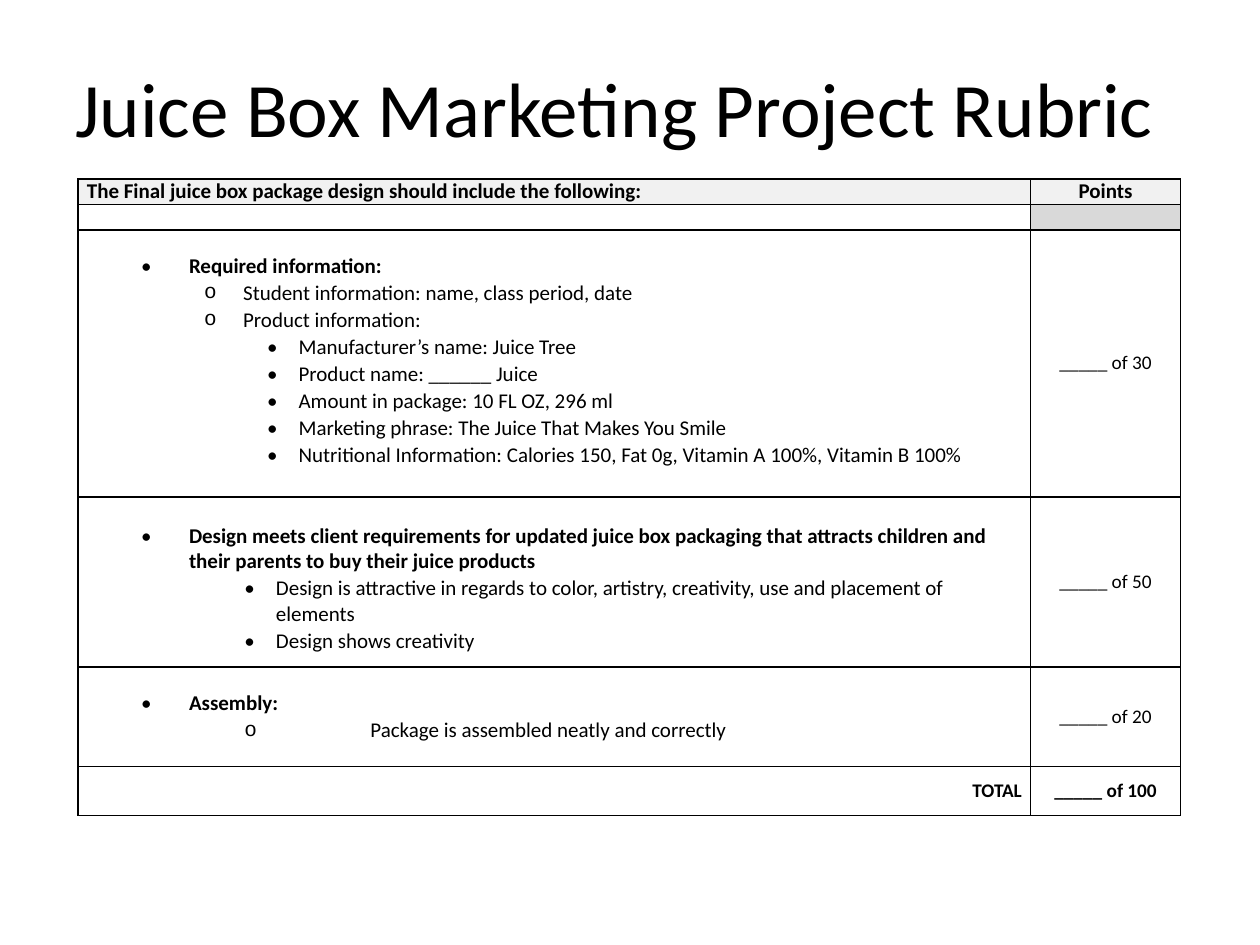
from dataclasses import dataclass

import lxml.etree
import pptx
import pptx.dml.color
import pptx.enum.text
import pptx.oxml.ns
import pptx.util

Inches = pptx.util.Inches
Align = pptx.enum.text.PP_ALIGN
Anchor = pptx.enum.text.MSO_ANCHOR


@dataclass(frozen=True)
class Theme:
    font: str = "Calibri"
    circle_font: str = "Courier New"
    ink: str = "000000"
    header_fill: str = "F1F1F1"
    blocked_fill: str = "D9D9D9"
    title_size: float = 44
    body_size: float = 12
    points_size: float = 11
    border_width: float = 1
    line_gap: float = 0.8


@dataclass(frozen=True)
class Bullet:
    symbol: str
    font: str
    left: float
    hanging: float
    level: int


@dataclass(frozen=True)
class Line:
    text: str
    bullet: Bullet | None = None
    bold: bool = False
    size: float = 12
    align: Align = Align.LEFT


@dataclass(frozen=True)
class CellContent:
    lines: tuple[Line, ...] = ()
    fill: str | None = None
    anchor: Anchor = Anchor.TOP
    left: float = 0
    top: float = 0
    right: float = 0


THEME = Theme()
HEADING = Bullet("•", THEME.font, 0.88, 0.38, 1)
CIRCLE = Bullet("o", THEME.circle_font, 1.31, 0.31, 2)
DETAIL = Bullet("•", THEME.font, 1.75, 0.25, 3)
DESIGN = Bullet("•", THEME.font, 1.57, 0.25, 2)
ASSEMBLY = Bullet("o", THEME.circle_font, 2.32, 1, 2)
COLUMN_WIDTHS = (7.56, 1.19)
ROW_HEIGHTS = (0.2, 0.2, 2.12, 1.35, 0.79, 0.39)
SIDE_MARGIN = 0.07


def criteria(top: float, *lines: Line) -> CellContent:
    return CellContent(lines, top=top, right=SIDE_MARGIN)


def points(text: str, bold: bool = False) -> CellContent:
    line = Line(text, bold=bold, size=THEME.points_size, align=Align.CENTER)
    return CellContent((line,), anchor=Anchor.MIDDLE)


RUBRIC = (
    (
        CellContent(
            (Line("The Final juice box package design should include the following:", bold=True),),
            THEME.header_fill,
            left=SIDE_MARGIN,
        ),
        CellContent((Line("Points", bold=True, align=Align.CENTER),), THEME.header_fill),
    ),
    (CellContent(), CellContent(fill=THEME.blocked_fill)),
    (
        criteria(
            0.19,
            Line("Required information:", HEADING, True),
            Line("Student information: name, class period, date", CIRCLE),
            Line("Product information:", CIRCLE),
            Line("Manufacturer’s name: Juice Tree", DETAIL),
            Line("Product name: ______ Juice", DETAIL),
            Line("Amount in package: 10 FL OZ, 296 ml", DETAIL),
            Line("Marketing phrase: The Juice That Makes You Smile", DETAIL),
            Line("Nutritional Information: Calories 150, Fat 0g, Vitamin A 100%, Vitamin B 100%", DETAIL),
        ),
        points("_____ of 30"),
    ),
    (
        criteria(
            0.21,
            Line(
                "Design meets client requirements for updated juice box packaging that attracts "
                "children and their parents to buy their juice products",
                HEADING,
                True,
            ),
            Line(
                "Design is attractive in regards to color, artistry, creativity, "
                "use and placement of elements",
                DESIGN,
            ),
            Line("Design shows creativity", DESIGN),
        ),
        points("_____ of 50"),
    ),
    (
        criteria(
            0.19,
            Line("Assembly:", HEADING, True),
            Line("Package is assembled neatly and correctly", ASSEMBLY),
        ),
        points("_____ of 20"),
    ),
    (
        CellContent(
            (Line("TOTAL", bold=True, size=THEME.points_size, align=Align.RIGHT),),
            anchor=Anchor.MIDDLE,
            right=SIDE_MARGIN,
        ),
        points("_____ of 100", True),
    ),
)


def apply_format(target, values: dict) -> None:
    for name, value in values.items():
        setattr(target, name, value)


def add_element(parent, tag: str, **attributes: str):
    return lxml.etree.SubElement(parent, pptx.oxml.ns.qn(tag), attributes)


def write_run(paragraph, text: str, size: float, bold: bool) -> None:
    run = paragraph.add_run()
    run.text = text
    apply_format(run.font, {"name": THEME.font, "size": pptx.util.Pt(size), "bold": bold})
    run.font.color.rgb = pptx.dml.color.RGBColor.from_string(THEME.ink)


def write_line(paragraph, line: Line, first: bool) -> None:
    if line.bullet:
        properties = paragraph._p.get_or_add_pPr()
        properties.set("marL", str(Inches(line.bullet.left)))
        properties.set("indent", str(-Inches(line.bullet.hanging)))
        add_element(properties, "a:buFont", typeface=line.bullet.font)
        add_element(properties, "a:buChar", char=line.bullet.symbol)
        paragraph.level = line.bullet.level
    gap = 0 if first else THEME.line_gap
    apply_format(paragraph, {"alignment": line.align, "space_before": pptx.util.Pt(gap)})
    write_run(paragraph, line.text, line.size, line.bold)


def draw_borders(cell) -> None:
    properties = cell._tc.get_or_add_tcPr()
    for index, side in enumerate(("a:lnL", "a:lnR", "a:lnT", "a:lnB")):
        border = add_element(properties, side, w=str(pptx.util.Pt(THEME.border_width)))
        add_element(add_element(border, "a:solidFill"), "a:srgbClr", val=THEME.ink)
        properties.insert(index, border)


def fill_cell(cell, content: CellContent) -> None:
    apply_format(cell, {
        "margin_left": Inches(content.left),
        "margin_top": Inches(content.top),
        "margin_right": Inches(content.right),
        "margin_bottom": 0,
        "vertical_anchor": content.anchor,
    })
    if content.fill:
        cell.fill.solid()
        cell.fill.fore_color.rgb = pptx.dml.color.RGBColor.from_string(content.fill)
    else:
        cell.fill.background()
    draw_borders(cell)
    frame = cell.text_frame
    for index, line in enumerate(content.lines):
        paragraph = frame.add_paragraph() if index else frame.paragraphs[0]
        write_line(paragraph, line, index == 0)
    if not content.lines:
        add_element(frame.paragraphs[0]._p, "a:endParaRPr", sz=str(int(THEME.points_size * 100)))


def add_title(slide, text: str) -> None:
    title = slide.shapes.title
    apply_format(title, {
        "left": Inches(0.38), "top": Inches(0.28), "width": Inches(9), "height": Inches(1.13),
    })
    title.text_frame.vertical_anchor = Anchor.MIDDLE
    paragraph = title.text_frame.paragraphs[0]
    paragraph.alignment = Align.CENTER
    write_run(paragraph, text, THEME.title_size, False)


def add_rubric(slide) -> None:
    table = slide.shapes.add_table(
        len(ROW_HEIGHTS), len(COLUMN_WIDTHS), Inches(0.62), Inches(1.42),
        Inches(sum(COLUMN_WIDTHS)), Inches(sum(ROW_HEIGHTS)),
    ).table
    apply_format(table, {"first_row": False, "horz_banding": False})
    for column, width in zip(table.columns, COLUMN_WIDTHS):
        column.width = Inches(width)
    for row, height, contents in zip(table.rows, ROW_HEIGHTS, RUBRIC):
        row.height = Inches(height)
        for cell, content in zip(row.cells, contents):
            fill_cell(cell, content)


def main() -> None:
    presentation = pptx.Presentation()
    apply_format(presentation, {"slide_width": Inches(10), "slide_height": Inches(7.5)})
    slide = presentation.slides.add_slide(presentation.slide_layouts[5])
    add_title(slide, "Juice Box Marketing Project Rubric")
    add_rubric(slide)
    presentation.save("out.pptx")


if __name__ == "__main__":
    main()
